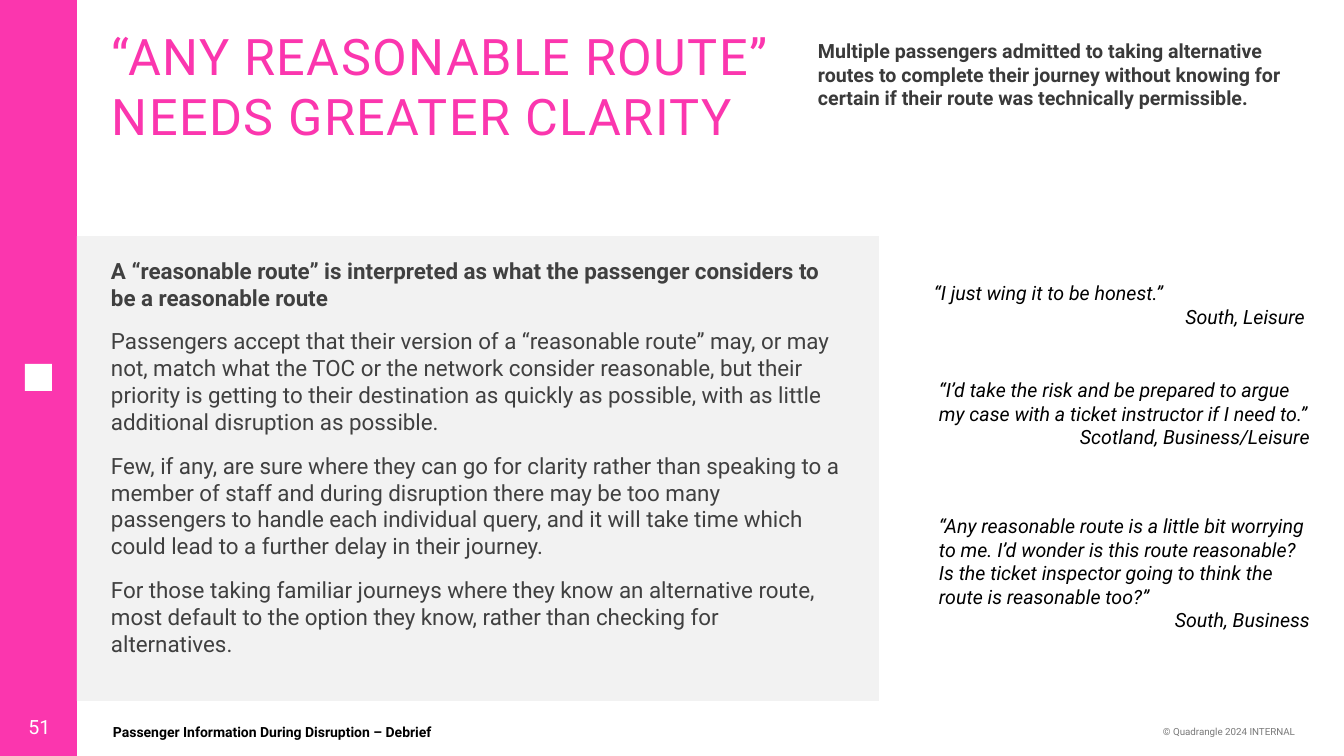
from pptx import Presentation
from pptx.dml.color import RGBColor
from pptx.enum.shapes import MSO_SHAPE
from pptx.enum.text import MSO_ANCHOR, MSO_AUTO_SIZE, PP_ALIGN
from pptx.util import Emu, Pt

RECT = MSO_SHAPE.RECTANGLE
TOP, MIDDLE = MSO_ANCHOR.TOP, MSO_ANCHOR.MIDDLE
LEFT, CENTER, RIGHT = PP_ALIGN.LEFT, PP_ALIGN.CENTER, PP_ALIGN.RIGHT
NO_FIT = MSO_AUTO_SIZE.NONE

PINK = RGBColor(0xFB, 0x36, 0xAE)
WHITE = RGBColor(0xFF, 0xFF, 0xFF)
BLACK = RGBColor(0x00, 0x00, 0x00)
PALE = RGBColor(0xF2, 0xF2, 0xF2)
DARK = RGBColor(0x40, 0x40, 0x40)
SLATE = RGBColor(0x3A, 0x3A, 0x3A)
GREY = RGBColor(0x79, 0x79, 0x79)
FONT = "Roboto"

WIDE, HIGH = 1344, 756
BAR = 77

TITLE = "“ANY REASONABLE ROUTE” NEEDS GREATER CLARITY"
LEAD = ("Multiple passengers admitted to taking alternative routes to complete "
        "their journey without knowing for certain if their route was "
        "technically permissible.")
BODY = [
    "A “reasonable route” is interpreted as what the passenger considers to "
    "be a reasonable route",
    "Passengers accept that their version of a “reasonable route” may, or may "
    "not, match what the TOC or the network consider reasonable, but their "
    "priority is getting to their destination as quickly as possible, with as "
    "little additional disruption as possible.",
    "Few, if any, are sure where they can go for clarity rather than speaking "
    "to a member of staff and during disruption there may be too many "
    "passengers to handle each individual query, and it will take time which "
    "could lead to a further delay in their journey.",
    "For those taking familiar journeys where they know an alternative route, "
    "most default to the option they know, rather than checking for "
    "alternatives.",
]
# Quote, speaker, and the box that holds them
QUOTES = [
    ("“I just wing it to be honest.”", "South, Leisure", (934, 281, 371, 48)),
    ("“I’d take the risk and be prepared to argue my case with a ticket "
     "instructor if I need to.”", "Scotland, Business/Leisure",
     (939, 378, 371, 96)),
    ("“Any reasonable route is a little bit worrying to me. I’d wonder is "
     "this route reasonable? Is the ticket inspector going to think the "
     "route is reasonable too?”", "South, Business", (939, 514, 371, 119)),
]


def px(n):
    return Emu(round(n * 914400 / 100.8))


def block(slide, box, color):
    shape = slide.shapes.add_shape(RECT, *map(px, box))
    shape.shadow.inherit = False
    shape.fill.solid()
    shape.fill.fore_color.rgb = color
    shape.line.fill.background()


def fill_text(frame, lines, size, color, align=LEFT, anchor=TOP, gap=0):
    frame.word_wrap = True
    frame.auto_size = NO_FIT
    frame.vertical_anchor = anchor
    frame.margin_left = frame.margin_right = 0
    frame.margin_top = frame.margin_bottom = 0
    frame.text = "\n".join(lines)
    for i, para in enumerate(frame.paragraphs):
        para.alignment = align
        para.space_before = Pt(gap if i else 0)
        for run in para.runs:
            run.font.name = FONT
            run.font.size = Pt(size)
            run.font.color.rgb = color
    return frame.paragraphs


def label(slide, box, lines, *args, **style):
    frame = slide.shapes.add_textbox(*map(px, box)).text_frame
    return fill_text(frame, lines, *args, **style)


def side_bar(slide, box):
    x, y, w, h = box
    block(slide, box, PINK)
    mark = 27
    block(slide, (x + (w - mark) // 2, y + 364, mark, mark), WHITE)
    label(slide, (x, y + h - 49, w + 2, 40), ["51"], 14, WHITE,
          align=CENTER, anchor=MIDDLE)


def header(slide, box):
    x, y, w, h = box
    title = slide.shapes.title
    title.left, title.top, title.width, title.height = map(
        px, (x, y, 797, h))
    para = fill_text(title.text_frame, [TITLE], 36, PINK)[0]
    para.runs[0].font._element.set("spc", "100")
    lead = label(slide, (x + w - 487, y + 14, 487, 72), [LEAD], 14, SLATE)
    lead[0].runs[0].font.bold = True


def panel(slide, box):
    x, y, w, h = box
    block(slide, box, PALE)
    paras = label(slide, (x + 34, y + 21, 730, h - 42), BODY, 16, DARK,
                  gap=12)
    paras[0].runs[0].font.bold = True


def quote(slide, box, words, who):
    paras = label(slide, box, [words, who], 14, BLACK)
    paras[1].alignment = RIGHT
    for para in paras:
        para.runs[0].font.italic = True


def footer(slide, box):
    x, y, w, h = box
    name = label(slide, (x, y, 409, h),
                 ["Passenger Information During Disruption – Debrief"],
                 10, BLACK, anchor=MIDDLE)
    name[0].runs[0].font.bold = True
    label(slide, (x + w - 434, y, 434, h), ["© Quadrangle 2024 INTERNAL"],
          7, GREY, align=RIGHT, anchor=MIDDLE)


def main():
    deck = Presentation()
    deck.slide_width, deck.slide_height = px(WIDE), px(HIGH)
    slide = deck.slides.add_slide(deck.slide_layouts[5])
    side_bar(slide, (0, 0, BAR, HIGH))
    header(slide, (112, 25, 1193, 122))
    panel(slide, (BAR, 236, 802, 465))
    for words, who, box in QUOTES:
        quote(slide, box, words, who)
    footer(slide, (113, 723, 1182, 18))
    deck.save("out.pptx")


if __name__ == "__main__":
    main()
